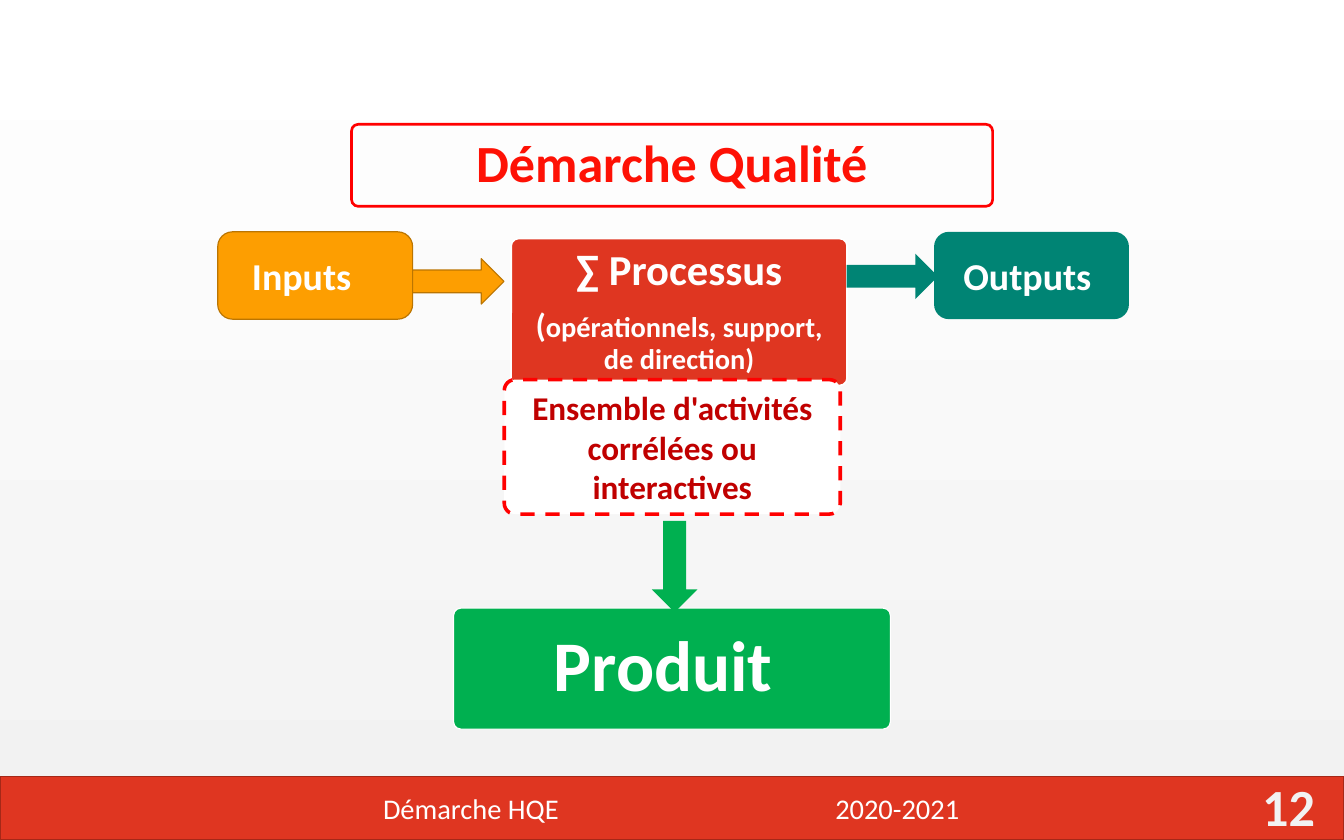
import pptx
import pptx.util
import pptx.dml.color
import pptx.enum.dml
import pptx.enum.shapes
import pptx.enum.text
import lxml.etree

COLORS = {
    "white": "FFFFFF", "mist": "F2F2F2", "brick": "DF3621", "rust": "A52818",
    "red": "FF0000", "scarlet": "FE1105", "crimson": "C00000", "green": "00B050",
    "amber": "FD9E01", "bronze": "BB7501", "teal": "008474",
}
ALIGN = pptx.enum.text.PP_ALIGN
SHAPE = pptx.enum.shapes.MSO_SHAPE

deck = pptx.Presentation()
deck.slide_width = pptx.util.Inches(15.75)
deck.slide_height = pptx.util.Inches(9.84)
column = deck.slide_width / 100
row = deck.slide_height / 100
slide = deck.slides.add_slide(deck.slide_layouts[5])


def rgb(name):
    return pptx.dml.color.RGBColor.from_string(COLORS[name])


def write(holder, paragraphs, color, bold=True, align=ALIGN.CENTER, insets=(1, 1),
          spacing=1.0, after=0):
    frame = holder.text_frame
    frame.word_wrap = True
    frame.auto_size = pptx.enum.text.MSO_AUTO_SIZE.NONE
    frame.vertical_anchor = pptx.enum.text.MSO_ANCHOR.MIDDLE
    frame.margin_left, frame.margin_right = (round(inset * column) for inset in insets)
    frame.margin_top = frame.margin_bottom = round(row / 2)
    for index, runs in enumerate(paragraphs):
        paragraph = frame.add_paragraph() if index else frame.paragraphs[0]
        paragraph.alignment = align
        paragraph.line_spacing = spacing
        if index < len(paragraphs) - 1:
            paragraph.space_after = pptx.util.Pt(after)
        for words, size in runs:
            run = paragraph.add_run()
            run.text = words
            run.font.name = "Calibri"
            run.font.size = pptx.util.Pt(size)
            run.font.bold = bold
            run.font.color.rgb = rgb(color)


backdrop = slide.background.fill
backdrop.gradient()
backdrop.gradient_angle = 270
for stop, shade, position in zip(backdrop.gradient_stops, ("white", "mist"), (0, 1)):
    stop.color.rgb = rgb(shade)
    stop.position = position

BLOCKS = {
    "footer": (SHAPE.RECTANGLE, (0, 92.4, 100, 7.6), None, "brick", "rust", 1),
    "heading": (SHAPE.ROUNDED_RECTANGLE, (26.16, 14.8, 47.7, 9.76), 0.08, None, "red", 2.25),
    "processes": (SHAPE.ROUNDED_RECTANGLE, (38.03, 28.4, 25, 17.5), 0.05, "brick", "white", 1.5),
    "activities": (SHAPE.ROUNDED_RECTANGLE, (37.52, 45.2, 25, 16), 0.08, "white", "red", 3),
    "product": (SHAPE.ROUNDED_RECTANGLE, (33.75, 72.4, 32.5, 14.4), 0.06, "green", "white", 1),
    "inputs": (SHAPE.ROUNDED_RECTANGLE, (16.2, 27.6, 14.5, 10.4), 0.17, "amber", "bronze", 1),
    "inflow": (SHAPE.RIGHT_ARROW, (30.7, 30.8, 6.8, 5.4), None, "amber", "bronze", 1),
    "outputs": (SHAPE.ROUNDED_RECTANGLE, (69.5, 27.6, 14.5, 10.4), 0.17, "teal", None, 0),
    "outflow": (SHAPE.RIGHT_ARROW, (63, 30.2, 6.8, 5.4), None, "teal", None, 0),
    "delivery": (SHAPE.DOWN_ARROW, (48.5, 62, 3.4, 10.9), None, "green", None, 0),
}
blocks = {}
for part, (kind, (left, top, width, height), corner, fill, line, weight) in BLOCKS.items():
    block = slide.shapes.add_shape(kind, round(left * column), round(top * row),
                                   round(width * column), round(height * row))
    block.shadow.inherit = False
    if corner:
        block.adjustments[0] = corner
    if fill:
        block.fill.solid()
        block.fill.fore_color.rgb = rgb(fill)
    else:
        block.fill.background()
    if line:
        block.line.color.rgb = rgb(line)
        block.line.width = pptx.util.Pt(weight)
    else:
        block.line.fill.background()
    blocks[part] = block
blocks["activities"].line.dash_style = pptx.enum.dml.MSO_LINE.DASH

title = slide.shapes.title
heading = blocks["heading"]
title.left, title.top = heading.left, heading.top
title.width, title.height = heading.width, heading.height
heading._element.addnext(title._element)
write(title, [[("Démarche Qualité", 44)]], "scarlet", spacing=0.9)

write(blocks["processes"],
      [[("∑ Processus", 36)], [("(", 28), ("opérationnels, support, de direction)", 24)]],
      "white", spacing=0.9, after=12.6)
write(blocks["activities"], [[("Ensemble d'activités corrélées ou interactives", 28)]], "crimson")
write(blocks["product"], [[("Produit", 60)]], "white", insets=(1, 2.3), spacing=0.9)
write(blocks["inputs"], [[("Inputs", 32)]], "white", insets=(0.6, 2.6))
write(blocks["outputs"], [[("Outputs", 32)]], "white", insets=(0.6, 1.2))

footer_line = blocks["footer"].text_frame.paragraphs[0]
tabs = lxml.etree.SubElement(footer_line._p.get_or_add_pPr(), pptx.oxml.ns.qn("a:tabLst"))
lxml.etree.SubElement(tabs, pptx.oxml.ns.qn("a:tab"), pos=str(round(33.65 * column)), algn="l")
write(blocks["footer"], [[("Démarche HQE\t2020-2021", 24)]], "white", bold=False,
      align=ALIGN.LEFT, insets=(28.5, 1))

page = slide.shapes.add_textbox(round(92.5 * column), round(93.2 * row),
                                round(6.1 * column), round(5.3 * row))
write(page, [[("12", 44)]], "mist", align=ALIGN.RIGHT, insets=(0.75, 0.75))

deck.save("out.pptx")
